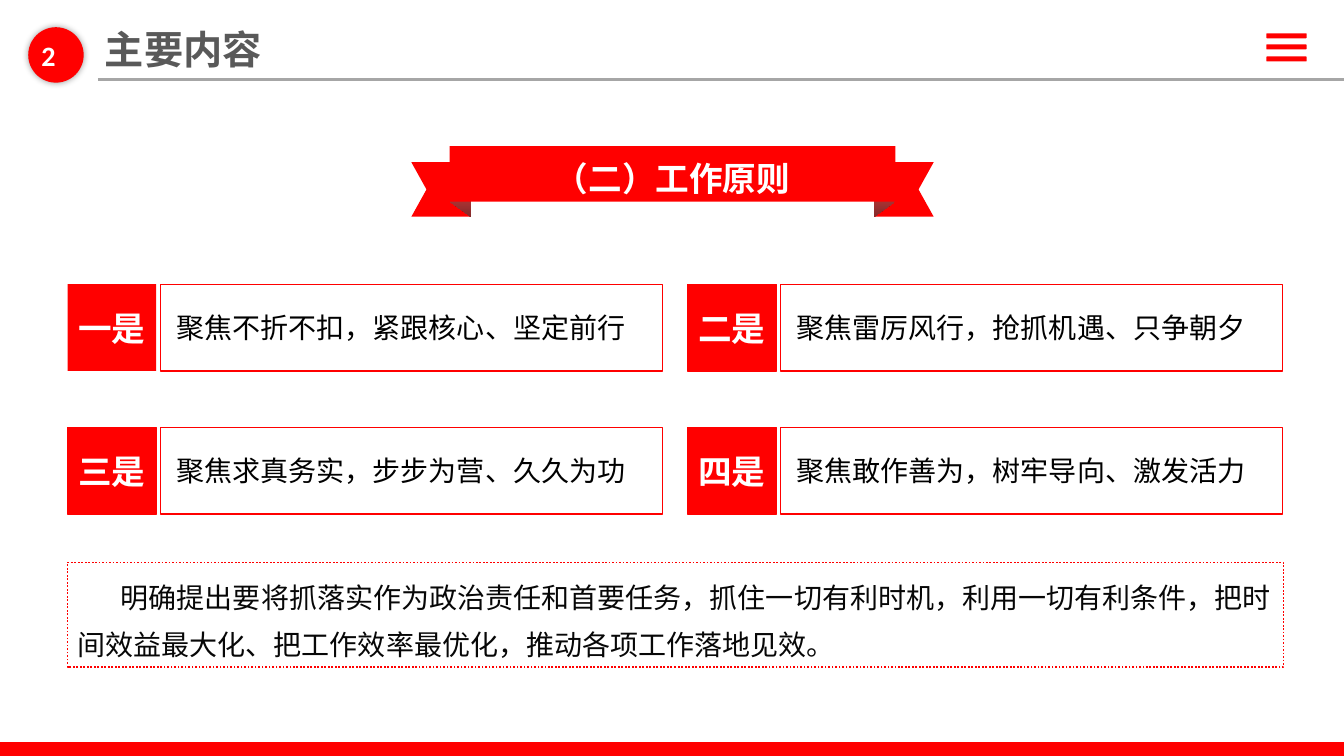
import dataclasses
from typing import Any

import pptx
import pptx.dml.color
import pptx.enum.dml
import pptx.enum.shapes
import pptx.enum.text
import pptx.oxml
import pptx.oxml.ns
import pptx.util
from lxml import etree

PX = 9144  # EMU in one px, 100 px to the inch
SLIDE_W, SLIDE_H = 1333, 750
CENTRE_X = 667
SHAPE = pptx.enum.shapes.MSO_SHAPE
ALIGN = pptx.enum.text.PP_ALIGN
ANCHOR = pptx.enum.text.MSO_ANCHOR
qn = pptx.oxml.ns.qn


@dataclasses.dataclass(frozen=True)
class Theme:
    red: str = "FF0000"
    fold_top: str = "FE4444"
    fold_bottom: str = "832B2B"
    rule: str = "A6A6A6"
    heading: str = "595959"
    white: str = "FFFFFF"
    black: str = "000000"
    summary: str = "070707"
    cjk: str = "Noto Sans CJK SC"
    latin: str = "Calibri"
    title_pt: int = 28
    label_pt: int = 24
    body_pt: int = 20


@dataclasses.dataclass(frozen=True)
class Box:
    left: int
    top: int
    width: int
    height: int

    def emu(self) -> list[int]:
        return [v * PX for v in dataclasses.astuple(self)]


@dataclasses.dataclass(frozen=True)
class Principle:
    label: str
    wording: str
    outlined: bool = True


THEME = Theme()
PRINCIPLES = [
    Principle("一是", "聚焦不折不扣，紧跟核心、坚定前行", outlined=False),
    Principle("二是", "聚焦雷厉风行，抢抓机遇、只争朝夕"),
    Principle("三是", "聚焦求真务实，步步为营、久久为功"),
    Principle("四是", "聚焦敢作善为，树牢导向、激发活力"),
]
SUMMARY = ("明确提出要将抓落实作为政治责任和首要任务，抓住一切有利时机，利用一切有利条件，"
           "把时间效益最大化、把工作效率最优化，推动各项工作落地见效。")


def rgb(value: str) -> pptx.dml.color.RGBColor:
    return pptx.dml.color.RGBColor.from_string(value)


def apply(target: Any, values: dict[str, Any]) -> None:
    for name, value in values.items():
        setattr(target, name, value)


def paint(shape: Any, fill: str | None, line: str | None, weight: float = 1) -> None:
    shape.shadow.inherit = False
    if fill:
        shape.fill.solid()
        shape.fill.fore_color.rgb = rgb(fill)
    else:
        shape.fill.background()
    if line:
        shape.line.color.rgb = rgb(line)
        shape.line.width = pptx.util.Pt(weight)
    else:
        shape.line.fill.background()


def add_block(shapes: Any, box: Box, fill: str | None = None, line: str | None = None,
              kind: Any = SHAPE.RECTANGLE, weight: float = 1) -> Any:
    block = shapes.add_shape(kind, *box.emu())
    paint(block, fill, line, weight)
    return block


def write(shape: Any, text: str, size: int, color: str, bold: bool = False,
          align: Any = ALIGN.LEFT, face: str = THEME.cjk, **frame: Any) -> Any:
    """Fill the shape with one paragraph and return that paragraph."""
    text_frame = shape.text_frame
    apply(text_frame, {"word_wrap": True, "vertical_anchor": ANCHOR.MIDDLE, **frame})
    paragraph = text_frame.paragraphs[0]
    paragraph.alignment = align
    run = paragraph.add_run()
    run.text = text
    apply(run.font, {"size": pptx.util.Pt(size), "bold": bold, "name": face})
    run.font.color.rgb = rgb(color)
    east_asian = etree.SubElement(run._r.get_or_add_rPr(), qn("a:ea"))
    east_asian.set("typeface", face)
    return paragraph


def add_outline(shapes: Any, points: list[tuple[int, int]]) -> Any:
    builder = shapes.build_freeform(*points[0], scale=PX)
    builder.add_line_segments(points[1:], close=True)
    return builder.convert_to_shape()


def add_header(slide: Any) -> None:
    shapes = slide.shapes
    # Menu bars, rule and bottom band
    for i in range(3):
        add_block(shapes, Box(1256, 33 + i * 23 // 2, 40, 5), THEME.red,
                  kind=SHAPE.ROUNDED_RECTANGLE)
    rule = shapes.add_connector(pptx.enum.shapes.MSO_CONNECTOR.STRAIGHT,
                                97 * PX, 79 * PX, SLIDE_W * PX, 79 * PX)
    rule.line.color.rgb = rgb(THEME.rule)
    rule.line.width = pptx.util.Pt(1.75)
    etree.SubElement(rule._element.spPr, qn("a:effectLst"))
    add_block(shapes, Box(0, 737, SLIDE_W, 13), THEME.red, THEME.red)

    # Title and section number
    title = shapes.title
    apply(title, dict(zip(("left", "top", "width", "height"), Box(94, 20, 489, 57).emu())))
    write(title, "主要内容", THEME.title_pt, THEME.heading, bold=True,
          auto_size=pptx.enum.text.MSO_AUTO_SIZE.NONE)
    number = add_block(shapes, Box(28, 27, 55, 55), THEME.red, kind=SHAPE.OVAL)
    write(number, "2", THEME.body_pt, THEME.white, bold=True, face=THEME.latin,
          margin_left=5 * PX, margin_right=0, margin_top=0, margin_bottom=0)
    glow = pptx.oxml.parse_xml(
        f'<a:outerShdw {pptx.oxml.ns.nsdecls("a")} blurRad="63500" dist="0" dir="0">'
        '<a:srgbClr val="000000"><a:alpha val="40000"/></a:srgbClr></a:outerShdw>')
    number._element.spPr.find(qn("a:effectLst")).append(glow)


def add_ribbon(shapes: Any) -> None:
    # Tail and fold, given as distances from the centre line
    tail = [(259, 161), (200, 161), (200, 215), (259, 215), (244, 188)]
    fold = [(221, 166), (200, 166), (200, 215), (221, 200)]
    for side in (1, -1):
        end = add_outline(shapes, [(CENTRE_X + side * x, y) for x, y in tail])
        paint(end, THEME.red, None)
        crease = add_outline(shapes, [(CENTRE_X + side * x, y) for x, y in fold])
        paint(crease, None, None)
        crease.fill.gradient()
        crease.fill.gradient_angle = 270
        for stop, color in zip(crease.fill.gradient_stops,
                               (THEME.fold_top, THEME.fold_bottom)):
            stop.color.rgb = rgb(color)
    band = add_block(shapes, Box(446, 145, 442, 55), THEME.red)
    write(band, "（二）工作原则", THEME.label_pt, THEME.white, bold=True,
          align=ALIGN.CENTER, margin_top=8 * PX, margin_bottom=0)


def add_principle(shapes: Any, principle: Principle, left: int, top: int) -> None:
    badge = add_block(shapes, Box(left, top, 88, 86), THEME.red,
                      THEME.red if principle.outlined else None)
    write(badge, principle.label, THEME.label_pt, THEME.white, bold=True,
          align=ALIGN.CENTER, word_wrap=False)
    card = add_block(shapes, Box(left + 92, top, 498, 86), line=THEME.red)
    write(card, principle.wording, THEME.body_pt, THEME.black, margin_left=16 * PX)


def add_summary(shapes: Any) -> None:
    summary = add_block(shapes, Box(67, 558, 1206, 104), line=THEME.red, weight=1.25)
    summary.line.dash_style = pptx.enum.dml.MSO_LINE.ROUND_DOT
    paragraph = write(summary, SUMMARY, THEME.body_pt, THEME.summary,
                      vertical_anchor=ANCHOR.TOP)
    paragraph.line_spacing = 1.4
    paragraph._p.get_or_add_pPr().set("indent", str(43 * PX))


def main() -> None:
    deck = pptx.Presentation()
    apply(deck, {"slide_width": SLIDE_W * PX, "slide_height": SLIDE_H * PX})
    slide = deck.slides.add_slide(deck.slide_layouts[5])
    add_header(slide)
    add_ribbon(slide.shapes)
    # Two by two grid of principles
    for i, principle in enumerate(PRINCIPLES):
        add_principle(slide.shapes, principle, 67 + i % 2 * 615, 282 + i // 2 * 142)
    add_summary(slide.shapes)
    deck.save("out.pptx")


if __name__ == "__main__":
    main()
